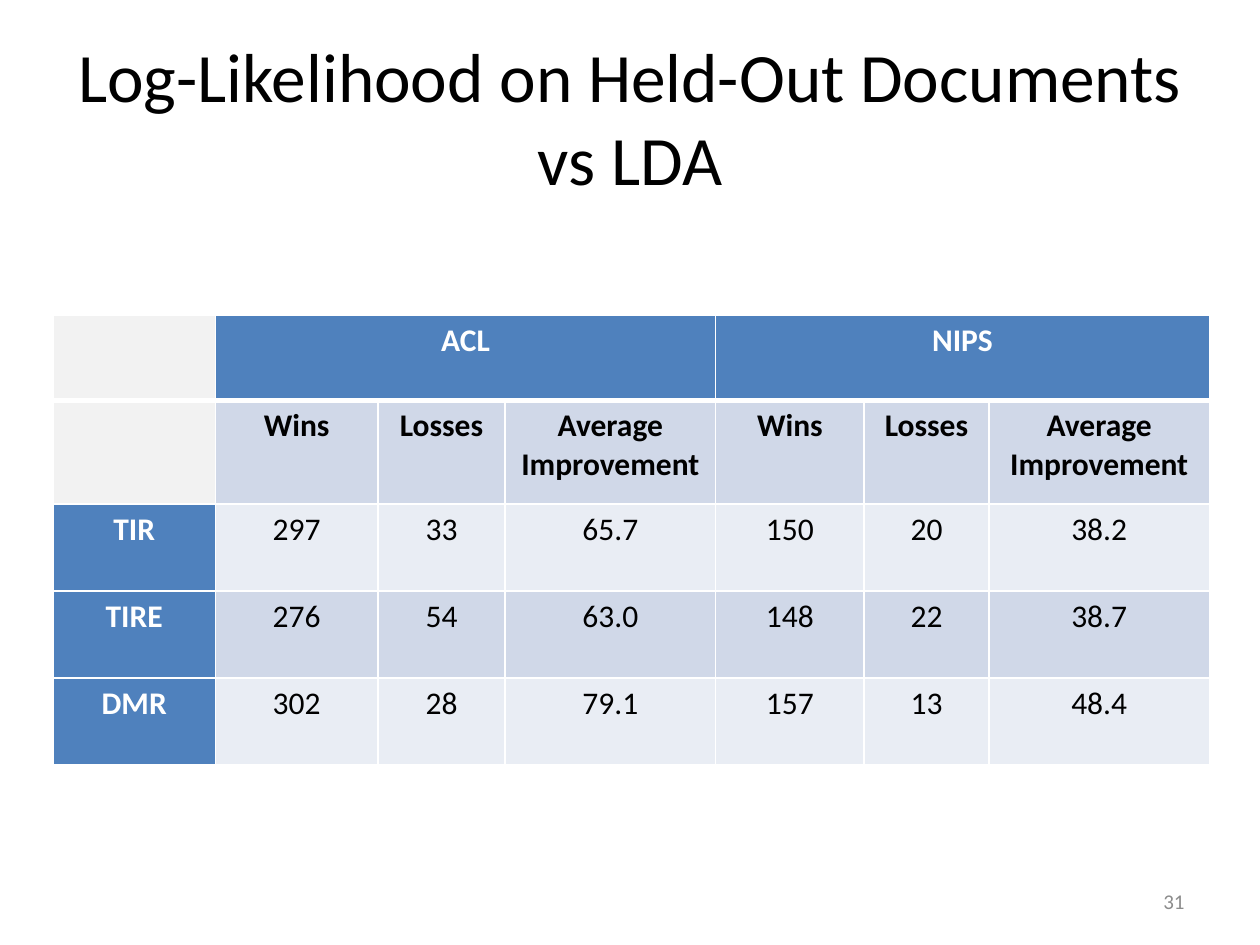
import pptx
import pptx.util
import pptx.dml.color
import pptx.enum.text
import lxml.etree
from pptx.oxml.ns import qn

Inches = pptx.util.Inches
ALIGN = pptx.enum.text.PP_ALIGN
MIDDLE = pptx.enum.text.MSO_ANCHOR.MIDDLE

COLORS = {"black": "000000", "white": "FFFFFF", "number": "8C8C8C",
          "header": "4F81BD", "corner": "F2F2F2",
          "dark band": "D0D8E8", "light band": "E9EDF4"}

TITLE = "Log-Likelihood on Held-Out Documents vs LDA"
PAGE_NUMBER = "31"
CORPORA = ["ACL", "NIPS"]
MEASURES = ["Wins", "Losses", "Average\nImprovement"]
RESULTS = [
    ("TIR", "297", "33", "65.7", "150", "20", "38.2"),
    ("TIRE", "276", "54", "63.0", "148", "22", "38.7"),
    ("DMR", "302", "28", "79.1", "157", "13", "48.4"),
]
COLUMN_WIDTHS = [1.29, 1.29, 1.01, 1.67, 1.18, 0.99, 1.75]
ROW_HEIGHTS = [0.68, 0.82, 0.69, 0.69, 0.69]


def rgb(name):
    return pptx.dml.color.RGBColor.from_string(COLORS[name])


def write(frame, text, align, color, **font_format):
    frame.text = text
    for para in frame.paragraphs:
        para.alignment = align
        for span in para.runs:
            span.font.name = "Calibri"
            span.font.color.rgb = rgb(color)
            for key, value in font_format.items():
                setattr(span.font, key, value)


def set_borders(cell, widths):
    """Draw white cell edges; widths maps an edge letter to points."""
    properties = cell._tc.get_or_add_tcPr()
    for index, edge in enumerate("LRTB"):
        line = lxml.etree.Element(qn("a:ln" + edge), w=str(pptx.util.Pt(widths[edge])))
        fill = lxml.etree.SubElement(line, qn("a:solidFill"))
        lxml.etree.SubElement(fill, qn("a:srgbClr"), val=COLORS["white"])
        properties.insert(index, line)


def cell_style(row, column):
    """Return fill, text colour and boldness for a table position."""
    if column == 0 and row < 2:
        return "corner", "black", True
    if column == 0 or row == 0:
        return "header", "white", True
    return ("dark band" if row % 2 else "light band"), "black", row == 1


def add_results_table(slide):
    top_row = [""]
    for corpus in CORPORA:
        top_row += [corpus] + [""] * (len(MEASURES) - 1)
    rows = [top_row, [""] + MEASURES * len(CORPORA), *RESULTS]
    table = slide.shapes.add_table(
        len(rows), len(COLUMN_WIDTHS), Inches(0.42), Inches(2.5),
        Inches(sum(COLUMN_WIDTHS)), Inches(sum(ROW_HEIGHTS))).table
    for column, width in zip(table.columns, COLUMN_WIDTHS):
        column.width = Inches(width)
    for row, height in zip(table.rows, ROW_HEIGHTS):
        row.height = Inches(height)
    for r, values in enumerate(rows):
        edges = {"L": 1, "R": 1, "T": 3 if r == 1 else 1, "B": 3 if r == 0 else 1}
        for c, value in enumerate(values):
            cell = table.cell(r, c)
            fill, color, bold = cell_style(r, c)
            cell.fill.solid()
            cell.fill.fore_color.rgb = rgb(fill)
            set_borders(cell, edges)
            write(cell.text_frame, value, ALIGN.CENTER, color,
                  size=pptx.util.Pt(18), bold=bold)
    for first in range(1, len(COLUMN_WIDTHS), len(MEASURES)):
        table.cell(0, first).merge(table.cell(0, first + len(MEASURES) - 1))


def main():
    deck = pptx.Presentation()
    deck.slide_width, deck.slide_height = Inches(10), Inches(7.5)
    slide = deck.slides.add_slide(deck.slide_layouts.get_by_name("Title Only"))

    title = slide.shapes.title
    title.left, title.top = Inches(0.5), Inches(0.3)
    title.width, title.height = Inches(9), Inches(1.25)
    write(title.text_frame, TITLE, ALIGN.CENTER, "black", size=pptx.util.Pt(39.6))
    title.text_frame.vertical_anchor = MIDDLE

    add_results_table(slide)

    number = slide.shapes.add_textbox(Inches(7.17), Inches(6.95), Inches(2.33), Inches(0.4))
    number.text_frame.word_wrap = True
    number.text_frame.vertical_anchor = MIDDLE
    write(number.text_frame, PAGE_NUMBER, ALIGN.RIGHT, "number", size=pptx.util.Pt(12))

    deck.save("out.pptx")


if __name__ == "__main__":
    main()
